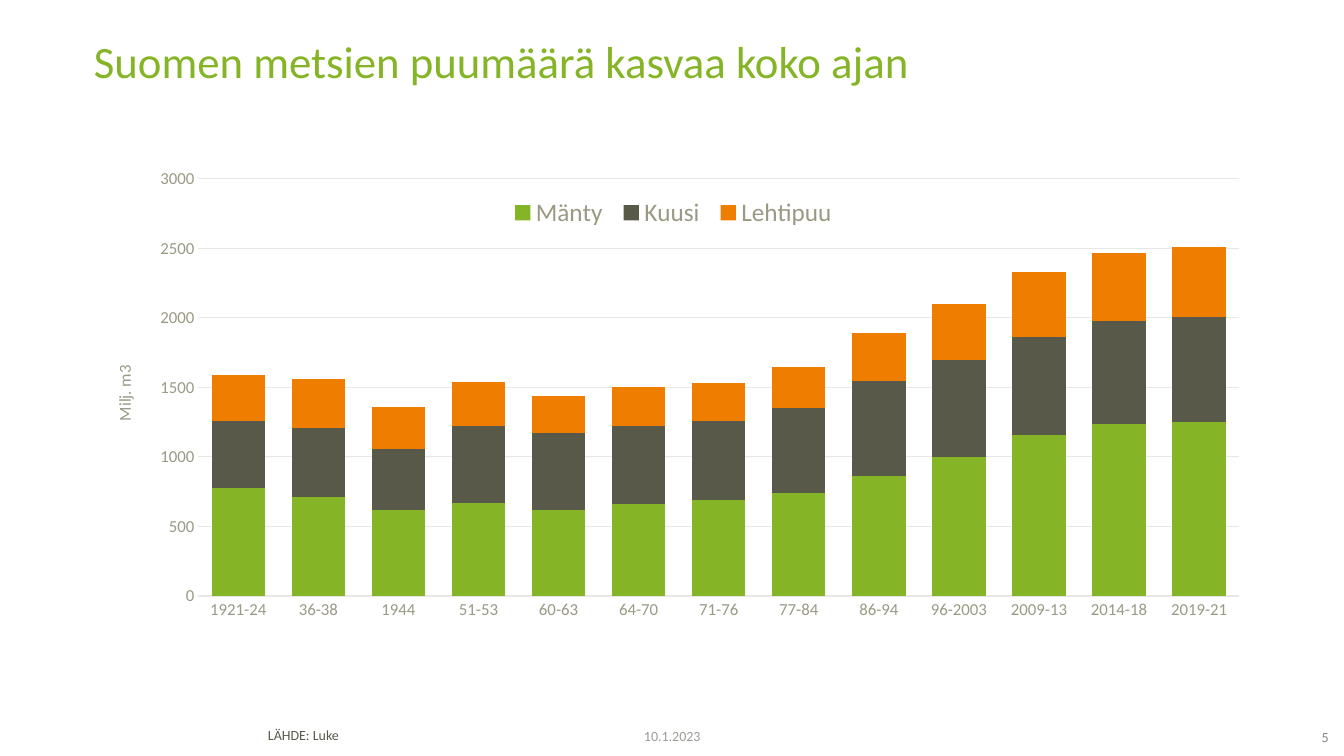
"""Build a slide with a stacked column chart of timber volume in Finnish forests."""
import pptx
import pptx.chart.data
import pptx.dml.color
import pptx.enum.chart
import pptx.enum.text
import pptx.oxml
import pptx.oxml.ns
import pptx.util

Pt = pptx.util.Pt
Color = pptx.dml.color.RGBColor
Align = pptx.enum.text.PP_ALIGN
Anchor = pptx.enum.text.MSO_ANCHOR
Chart = pptx.enum.chart

GREEN = Color(0x85, 0xB5, 0x26)
DARK = Color(0x59, 0x59, 0x4A)
ORANGE = Color(0xEF, 0x7D, 0x00)
LABEL = Color(0x99, 0x99, 0x84)
RULE = Color(0xE7, 0xE7, 0xE3)
NUMBER = Color(0x87, 0x87, 0x87)
DATE = Color(0x9B, 0x9B, 0x96)

YEARS = ["1921-24", "36-38", "1944", "51-53", "60-63", "64-70", "71-76",
         "77-84", "86-94", "96-2003", "2009-13", "2014-18", "2019-21"]
TREES = [
    ("Mänty", GREEN, [780, 710, 620, 670, 620, 660, 690, 740, 860, 1000, 1160, 1240, 1250]),
    ("Kuusi", DARK, [480, 500, 440, 550, 550, 560, 570, 610, 690, 700, 700, 740, 760]),
    ("Lehtipuu", ORANGE, [330, 350, 300, 320, 270, 280, 270, 300, 340, 400, 470, 490, 500]),
]


class Page:
    def __init__(self, slide, face):
        self.slide = slide
        self.face = face

    def style(self, font, size, color):
        font.name = self.face
        font.size = Pt(size)
        font.bold = False
        font.color.rgb = color

    def text(self, box, words, size, color, align=Align.LEFT, anchor=Anchor.TOP,
             pads=(7.2, 3.6, 7.2, 3.6), lines=1.0):
        frame = self.slide.shapes.add_textbox(*map(Pt, box)).text_frame
        frame.word_wrap = True
        frame.vertical_anchor = anchor
        (frame.margin_left, frame.margin_top,
         frame.margin_right, frame.margin_bottom) = map(Pt, pads)
        para = frame.paragraphs[0]
        para.alignment = align
        para.line_spacing = lines
        run = para.add_run()
        run.text = words
        self.style(run.font, size, color)

    def place(self, node, after, **spots):
        for old in node.findall(pptx.oxml.ns.qn("c:layout")):
            node.remove(old)
        parts = "".join(f'<c:{key} val="{val}"/>' for key, val in spots.items())
        space = pptx.oxml.ns.nsdecls("c")
        node.insert(after, pptx.oxml.parse_xml(
            f"<c:layout {space}><c:manualLayout>{parts}</c:manualLayout></c:layout>"))

    def axis(self, axis):
        axis.major_tick_mark = Chart.XL_TICK_MARK.NONE
        axis.minor_tick_mark = Chart.XL_TICK_MARK.NONE
        self.style(axis.tick_labels.font, 12, LABEL)

    def rule(self, line):
        line.color.rgb = RULE
        line.width = Pt(0.75)

    def chart(self, box, years, trees, unit):
        data = pptx.chart.data.CategoryChartData()
        data.categories = years
        for name, _, vals in trees:
            data.add_series(name, vals)
        chart = self.slide.shapes.add_chart(
            Chart.XL_CHART_TYPE.COLUMN_STACKED, *map(Pt, box), data).chart
        self.style(chart.font, 10, DARK)
        chart.has_title = False
        plot = chart.plots[0]
        plot.gap_width = 50
        plot.overlap = 100
        plot.vary_by_categories = False
        for bar, (_, color, _) in zip(plot.series, trees):
            bar.format.fill.solid()
            bar.format.fill.fore_color.rgb = color

        years_axis, scale = chart.category_axis, chart.value_axis
        self.axis(years_axis)
        self.rule(years_axis.format.line)
        self.axis(scale)
        scale.format.line.fill.background()
        scale.minimum_scale, scale.maximum_scale, scale.major_unit = 0, 3000, 500
        self.rule(scale.major_gridlines.format.line)
        run = scale.axis_title.text_frame.paragraphs[0].add_run()
        run.text = unit
        self.style(run.font, 12, LABEL)

        chart.has_legend = True
        chart.legend.position = Chart.XL_LEGEND_POSITION.BOTTOM
        chart.legend.include_in_layout = False
        self.style(chart.legend.font, 18, LABEL)

        root = chart.element
        self.place(root.xpath("//c:plotArea")[0], 0, layoutTarget="inner",
                   xMode="edge", yMode="edge", x=0.097, y=0.04, w=0.883, h=0.802)
        self.place(root.xpath("//c:valAx/c:title")[0], 1,
                   xMode="edge", yMode="edge", x=0.022, y=0.392)
        self.place(root.xpath("//c:legend")[0], 1,
                   xMode="edge", yMode="edge", x=0.355, y=0.07, w=0.29, h=0.07)


def main():
    deck = pptx.Presentation()
    deck.slide_width, deck.slide_height = Pt(960), Pt(540)
    page = Page(deck.slides.add_slide(deck.slide_layouts[6]), "Calibri")
    page.text((184.3, 517, 517, 19.4), "LÄHDE: Luke", 10, DARK, lines=0.85)
    page.text((910.8, 521.3, 38.2, 13.7), "5", 10, NUMBER, Align.RIGHT,
              Anchor.MIDDLE, (0, 0, 0, 2.9))
    page.text((60, 28, 842, 70.6), "Suomen metsien puumäärä kasvaa koko ajan",
              32, GREEN, lines=0.8)
    page.chart((60, 113, 842, 371.5), YEARS, TREES, "Milj. m3")
    page.text((372.2, 514.8, 216, 22.3), "10.1.2023", 10, DATE, Align.CENTER,
              Anchor.MIDDLE)
    deck.save("out.pptx")


if __name__ == "__main__":
    main()
